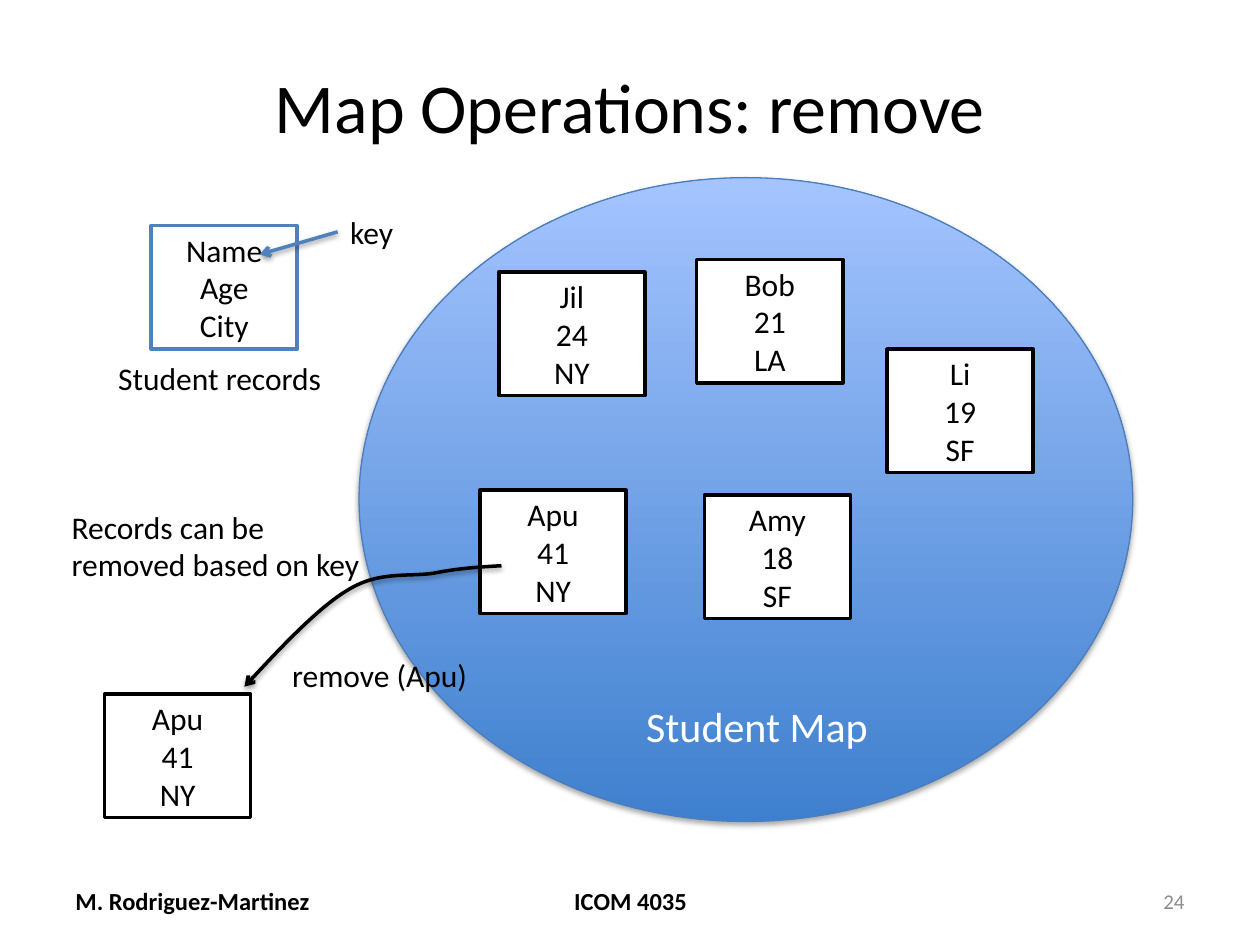
import pptx
import pptx.util
import pptx.dml.color
import pptx.enum.shapes
import pptx.enum.text
import pptx.oxml.ns
from lxml import etree

Inches = pptx.util.Inches
Pt = pptx.util.Pt
RGBColor = pptx.dml.color.RGBColor
Shape = pptx.enum.shapes.MSO_SHAPE
Align = pptx.enum.text.PP_ALIGN
Anchor = pptx.enum.text.MSO_ANCHOR
qn = pptx.oxml.ns.qn

BLACK = RGBColor(0x00, 0x00, 0x00)
WHITE = RGBColor(0xFF, 0xFF, 0xFF)
GRAY = RGBColor(0x8C, 0x8C, 0x8C)
BLUE = RGBColor(0x4F, 0x81, 0xBD)
RIM = RGBColor(0x4B, 0x7E, 0xBC)
DEEP = RGBColor(0x3F, 0x80, 0xCE)
PALE = RGBColor(0xA4, 0xC4, 0xFF)


class Sketch:
    """Holds the text style and the slide being drawn."""
    font = "Calibri"
    size = 18
    box_w, box_h = 1.16, 0.98

    def __init__(self, slide):
        self.shapes = slide.shapes

    def letter(self, shape, text, size, color, align, bold=False):
        """Set the text of the shape and format its runs."""
        frame = shape.text_frame
        frame.text = text
        for para in frame.paragraphs:
            para.alignment = align
            for run in para.runs:
                run.font.name = self.font
                run.font.size = Pt(size)
                run.font.bold = bold
                run.font.color.rgb = color

    def stroke(self, shape, color, width=2):
        shape.line.color.rgb = color
        shape.line.width = Pt(width)

    def shade(self, shape, alpha, gap):
        """Give the shape a soft shadow straight below it."""
        props = shape._element.spPr
        effects = props.find(qn("a:effectLst"))
        if effects is None:
            effects = etree.SubElement(props, qn("a:effectLst"))
        outer = etree.SubElement(
            effects, qn("a:outerShdw"), blurRad=str(Pt(3.1)),
            dist=str(Pt(gap)), dir="5400000", rotWithShape="0")
        color = etree.SubElement(outer, qn("a:srgbClr"), val=str(BLACK))
        etree.SubElement(color, qn("a:alpha"), val=str(alpha * 1000))

    def point(self, shape):
        """Put an arrowhead on the end of the line."""
        line = shape._element.spPr.find(qn("a:ln"))
        etree.SubElement(line, qn("a:tailEnd"), type="arrow")

    def label(self, text, left, top, width, height, size=size, color=BLACK,
              align=Align.LEFT, bold=False, anchor=Anchor.TOP, wrap=False):
        box = self.shapes.add_textbox(
            Inches(left), Inches(top), Inches(width), Inches(height))
        box.text_frame.word_wrap = wrap
        box.text_frame.vertical_anchor = anchor
        self.letter(box, text, size, color, align, bold)

    def panel(self, text, left, top, width, height, **style):
        """Add a wrapped text box with its text centred in height."""
        self.label(text, left, top, width, height,
                   anchor=Anchor.MIDDLE, wrap=True, **style)

    def record(self, lines, left, top, color=BLACK):
        box = self.shapes.add_shape(
            Shape.RECTANGLE, Inches(left), Inches(top),
            Inches(self.box_w), Inches(self.box_h))
        box.shadow.inherit = False
        box.fill.solid()
        box.fill.fore_color.rgb = WHITE
        self.stroke(box, color)
        box.text_frame.vertical_anchor = Anchor.MIDDLE
        self.letter(box, "\n".join(lines), self.size, BLACK, Align.CENTER)

    def oval(self, left, top, width, height):
        oval = self.shapes.add_shape(
            Shape.OVAL, Inches(left), Inches(top),
            Inches(width), Inches(height))
        oval.shadow.inherit = False
        oval.fill.gradient()
        oval.fill.gradient_angle = 90
        for stop, color in zip(oval.fill.gradient_stops, (DEEP, PALE)):
            stop.color.rgb = color
        self.stroke(oval, RIM, 0.75)
        self.shade(oval, 35, 1.8)

    def arrow(self, start, end):
        line = self.shapes.add_connector(
            pptx.enum.shapes.MSO_CONNECTOR.STRAIGHT,
            *(Inches(value) for value in start + end))
        self.stroke(line, BLUE)
        self.point(line)
        self.shade(line, 38, 1.6)

    def curve(self, start, knots):
        """Draw a curved arrow; each three knots make one cubic segment."""
        pen = self.shapes.build_freeform(*(Inches(v) for v in start))
        pen.add_line_segments(
            [(Inches(x), Inches(y)) for x, y in knots], close=False)
        curve = pen.convert_to_shape()
        track = curve._element.spPr.find(".//" + qn("a:path"))
        steps = track.findall(qn("a:lnTo"))
        for first in range(0, len(steps), 3):
            cubic = etree.SubElement(track, qn("a:cubicBezTo"))
            for step in steps[first:first + 3]:
                cubic.append(step[0])
                track.remove(step)
        curve.shadow.inherit = False
        curve.fill.background()
        self.stroke(curve, BLACK)
        self.point(curve)
        self.shade(curve, 38, 1.6)


def main():
    deck = pptx.Presentation()
    deck.slide_width, deck.slide_height = Inches(10), Inches(7.5)
    art = Sketch(deck.slides.add_slide(deck.slide_layouts[6]))

    art.oval(2.85, 1.41, 6.14, 5.11)
    art.panel("Map Operations: remove", 0.5, 0.3, 9, 1.07,
              size=40, align=Align.CENTER)
    art.panel("M. Rodriguez-Martinez", 0.5, 6.95, 2.33, 0.4,
              size=14, bold=True)
    art.panel("ICOM 4035", 3.42, 6.95, 3.17, 0.4,
              size=14, bold=True, align=Align.CENTER)
    art.panel("24", 7.17, 6.95, 2.33, 0.4,
              size=12, color=GRAY, align=Align.RIGHT)

    art.record(("Name", "Age", "City"), 1.2, 1.79, BLUE)
    apu = ("Apu", "41", "NY")
    for lines, left, top in (
            (("Jil", "24", "NY"), 3.96, 2.16),
            (("Bob", "21", "LA"), 5.53, 2.06),
            (apu, 3.81, 3.89),
            (("Amy", "18", "SF"), 5.59, 3.93),
            (("Li", "19", "SF"), 7.04, 2.77),
            (apu, 0.83, 5.51)):
        art.record(lines, left, top)

    art.label("Student records", 0.84, 2.8, 1.84, 0.4)
    art.label("Student Map", 5.03, 5.51, 1.98, 0.5, size=24, color=WHITE)
    art.label("Records can be\nremoved based on key", 0.47, 3.98, 2.52, 0.71)
    art.curve((3.98, 4.49), (
        (3.81, 4.5), (3.64, 4.51), (3.44, 4.55),
        (3.23, 4.58), (3, 4.53), (2.75, 4.69),
        (2.5, 4.84), (1.94, 5.45), (1.94, 5.45)))
    art.label("key", 2.68, 1.64, 0.56, 0.4)
    art.arrow((2.68, 1.84), (2.06, 2.02))
    art.label("remove (Apu)", 2.22, 5.16, 1.61, 0.4)

    deck.save("out.pptx")


if __name__ == "__main__":
    main()
